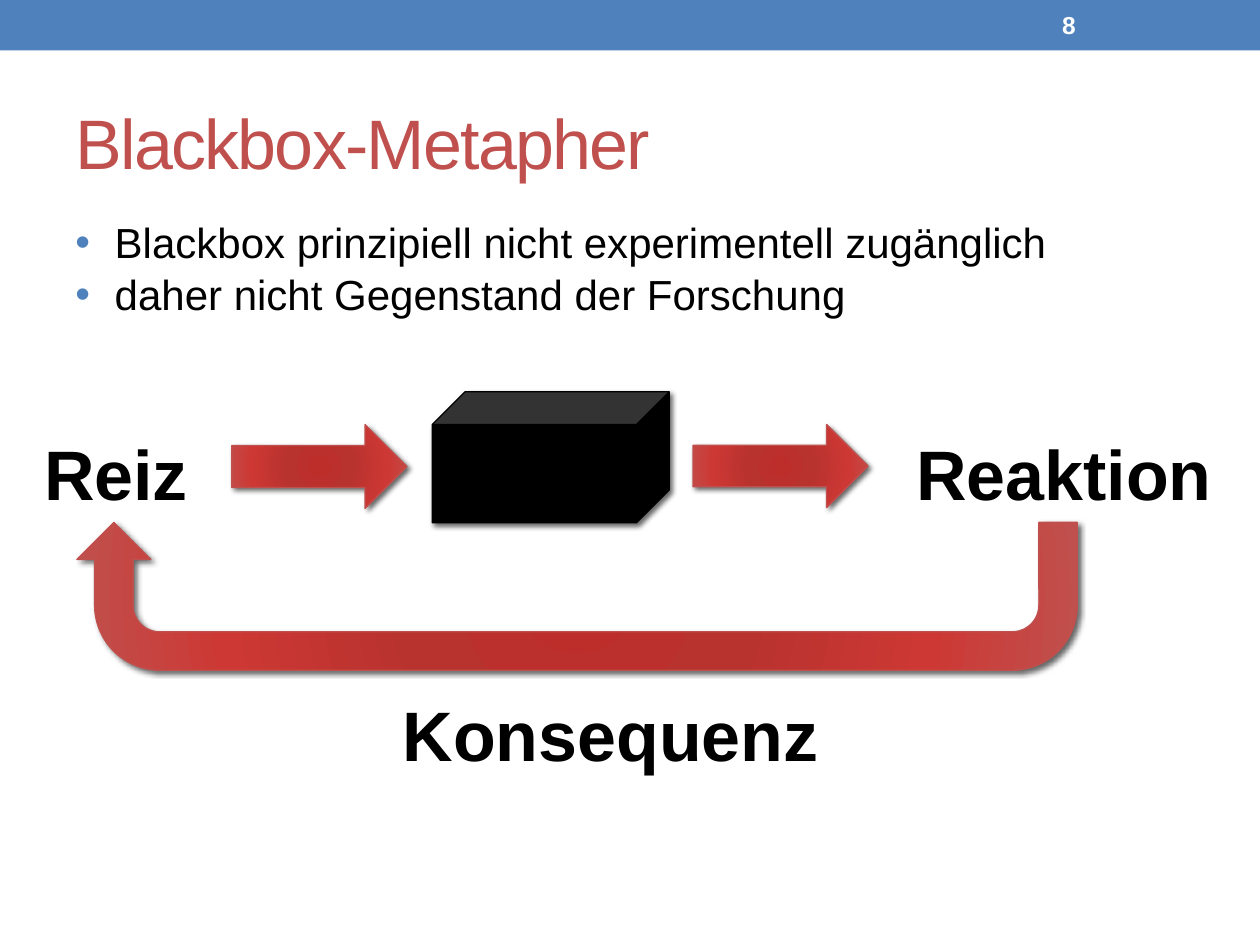
from dataclasses import dataclass

from pptx import Presentation
from pptx.dml.color import RGBColor
from pptx.enum.shapes import MSO_SHAPE
from pptx.enum.text import MSO_ANCHOR, PP_ALIGN
from pptx.oxml import parse_xml
from pptx.oxml.ns import nsdecls, qn
from pptx.util import Pt

BLUE = RGBColor(0x4F, 0x81, 0xBD)
RED = RGBColor(0xC0, 0x50, 0x4D)
BLACK = RGBColor(0, 0, 0)
WHITE = RGBColor(0xFF, 0xFF, 0xFF)
STOPS = (
    (0, RGBColor(0xBD, 0x2D, 0x29)),
    (34, RGBColor(0xB8, 0x32, 0x2E)),
    (70, RGBColor(0xCD, 0x38, 0x34)),
    (100, RED),
)


@dataclass(frozen=True)
class Box:
    left: float
    top: float
    width: float
    height: float

    def points(self) -> tuple:
        return Pt(self.left), Pt(self.top), Pt(self.width), Pt(self.height)


@dataclass(frozen=True)
class Label:
    text: str
    box: Box


@dataclass(frozen=True)
class Arrow:
    kind: MSO_SHAPE
    box: Box
    turn: float = 0
    adjust: tuple = ()


LABELS = (
    Label("Reiz", Box(14.4, 242.6, 103.7, 55.4)),
    Label("Reaktion", Box(510.5, 242.6, 195.1, 55.4)),
    Label("Konsequenz", Box(200.9, 391.7, 295.9, 55.4)),
)
ARROWS = (
    Arrow(MSO_SHAPE.RIGHT_ARROW, Box(132.5, 242.6, 100.1, 48)),
    Arrow(MSO_SHAPE.RIGHT_ARROW, Box(396, 242.6, 100.1, 47.5)),
    Arrow(MSO_SHAPE.U_TURN_ARROW, Box(43.9, 298.5, 571.7, 84.5), 180,
          (0.26, 0.25, 0.25, 0.44, 1)),
)


def add_text(slide, box: Box, text: str, *, size: float, color: RGBColor,
             bold: bool = False, align=PP_ALIGN.LEFT, anchor=MSO_ANCHOR.TOP,
             track: float = 0, bullet: bool = False, before: float = 0):
    """Write each line of text as one paragraph."""
    frame = slide.shapes.add_textbox(*box.points()).text_frame
    frame.word_wrap = True
    frame.vertical_anchor = anchor
    for i, line in enumerate(text.split("\n")):
        para = frame.paragraphs[0] if i == 0 else frame.add_paragraph()
        para.alignment = align
        para.space_before = Pt(before)
        run = para.add_run()
        run.text = line
        font = run.font
        font.name, font.size, font.bold = "Arial", Pt(size), bold
        font.color.rgb = color
        if track:
            font._element.set("spc", str(round(track * 100)))
        if bullet:
            add_bullet(para)


def add_bullet(para) -> None:
    props = para._p.get_or_add_pPr()
    props.set("marL", str(Pt(22.5)))
    props.set("indent", str(-Pt(22.5)))
    for xml in (
        f'<a:buClr {nsdecls("a")}><a:srgbClr val="{BLUE}"/></a:buClr>',
        f'<a:buFont {nsdecls("a")} typeface="Arial"/>',
        f'<a:buChar {nsdecls("a")} char="•"/>',
    ):
        props.append(parse_xml(xml))


def add_shape(slide, kind: MSO_SHAPE, box: Box, fill: RGBColor, line=None):
    shape = slide.shapes.add_shape(kind, *box.points())
    shape.shadow.inherit = False
    shape.fill.solid()
    shape.fill.fore_color.rgb = fill
    if line is None:
        shape.line.fill.background()
    else:
        shape.line.color.rgb = line
        shape.line.width = Pt(0.75)
    return shape


def add_shadow(shape) -> None:
    effects = shape._element.spPr.find(qn("a:effectLst"))
    effects.append(parse_xml(
        f'<a:outerShdw {nsdecls("a")} blurRad="{Pt(3)}" dist="{Pt(2)}" '
        'dir="2700000" algn="tl" rotWithShape="0"><a:srgbClr val="000000">'
        '<a:alpha val="60000"/></a:srgbClr></a:outerShdw>'))


def add_glow(shape) -> None:
    """Swap the solid fill for a round gradient."""
    stops = "".join(
        f'<a:gs pos="{at * 1000}"><a:srgbClr val="{color}"/></a:gs>'
        for at, color in STOPS)
    props = shape._element.spPr
    props.replace(props.find(qn("a:solidFill")), parse_xml(
        f'<a:gradFill {nsdecls("a")} rotWithShape="1"><a:gsLst>{stops}</a:gsLst>'
        '<a:path path="circle"><a:fillToRect l="100000" t="100000" '
        'r="100000" b="100000"/></a:path></a:gradFill>'))


def add_arrow(slide, arrow: Arrow) -> None:
    shape = add_shape(slide, arrow.kind, arrow.box, RED, RED)
    shape.rotation = arrow.turn
    for i, value in enumerate(arrow.adjust):
        shape.adjustments[i] = value
    add_glow(shape)
    add_shadow(shape)


def main() -> None:
    deck = Presentation()
    deck.slide_width, deck.slide_height = Pt(720), Pt(540)
    slide = deck.slides.add_slide(deck.slide_layouts[6])

    # Top band with page number
    add_shape(slide, MSO_SHAPE.RECTANGLE, Box(0, 0, 720, 28.8), BLUE)
    add_text(slide, Box(599.8, 1.4, 84.2, 25.9), "8", size=14, color=WHITE,
             bold=True, anchor=MSO_ANCHOR.MIDDLE)

    # Title and bullets
    add_text(slide, Box(36, 41.8, 648, 77.8), "Blackbox-Metapher", size=40,
             color=RED, anchor=MSO_ANCHOR.MIDDLE, track=-1)
    add_text(slide, Box(36, 120.2, 648, 94.3),
             "Blackbox prinzipiell nicht experimentell zugänglich\n"
             "daher nicht Gegenstand der Forschung",
             size=24, color=BLACK, bullet=True, before=1)

    # Black box, arrows and labels
    cube = add_shape(slide, MSO_SHAPE.CUBE, Box(247, 223.9, 135.4, 74.9),
                     BLACK, BLACK)
    add_shadow(cube)
    for arrow in ARROWS:
        add_arrow(slide, arrow)
    for label in LABELS:
        add_text(slide, label.box, label.text, size=40, color=BLACK, bold=True,
                 align=PP_ALIGN.CENTER)

    deck.save("out.pptx")


if __name__ == "__main__":
    main()
